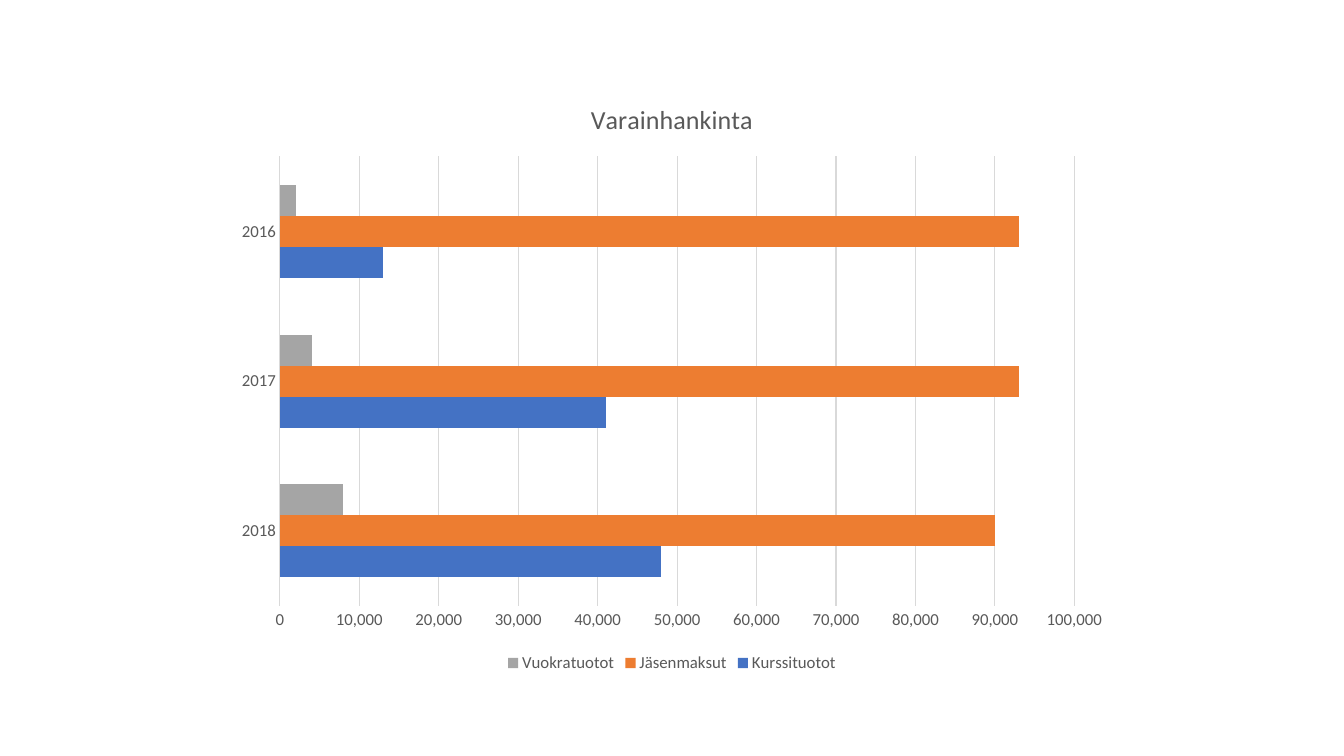
"""Build a slide with a bar chart of fundraising income by year."""
from pptx import Presentation
from pptx.chart.data import CategoryChartData
from pptx.dml.color import RGBColor
from pptx.enum.chart import XL_CHART_TYPE, XL_LEGEND_POSITION, XL_TICK_MARK
from pptx.util import Pt

BAR_CLUSTERED = XL_CHART_TYPE.BAR_CLUSTERED
LEGEND_BOTTOM = XL_LEGEND_POSITION.BOTTOM
NO_TICKS = XL_TICK_MARK.NONE

TITLE = "Varainhankinta"
YEARS = ["2018", "2017", "2016"]
INCOME = [
    ("Kurssituotot", [48000, 41000, 13000], "blue"),
    ("Jäsenmaksut", [90000, 93000, 93000], "orange"),
    ("Vuokratuotot", [8000, 4000, 2000], "silver"),
]
COLORS = {
    "blue": "4472C4",
    "orange": "ED7D31",
    "silver": "A5A5A5",
    "text": "595959",
    "line": "D9D9D9",
}
FONT = "Calibri"
SLIDE_SIZE = (1344, 756)
CHART_BOX = (224, 79, 896, 598)


def px(length):
    return round(length * 914400 / 100.8)


def color(name):
    return RGBColor.from_string(COLORS[name])


def style_font(font, size):
    font.name = FONT
    font.size = Pt(size)
    font.bold = False
    font.color.rgb = color("text")


def style_line(line):
    line.color.rgb = color("line")
    line.width = Pt(0.75)


def add_income_chart(slide):
    data = CategoryChartData(number_format="#,##0")
    data.categories = YEARS
    for name, amounts, _ in INCOME:
        data.add_series(name, amounts)
    chart = slide.shapes.add_chart(BAR_CLUSTERED, *map(px, CHART_BOX), data).chart
    style_font(chart.font, 12)

    chart.has_title = True
    heading = chart.chart_title.text_frame.paragraphs[0].add_run()
    heading.text = TITLE
    style_font(heading.font, 18.6)
    chart.chart_title.include_in_layout = False

    chart.has_legend = True
    chart.legend.position = LEGEND_BOTTOM
    chart.legend.include_in_layout = False
    style_font(chart.legend.font, 12)

    bars = chart.plots[0]
    bars.gap_width = 182
    bars.overlap = 0
    bars.vary_by_categories = False
    for series, (_, _, fill) in zip(bars.series, INCOME):
        series.format.fill.solid()
        series.format.fill.fore_color.rgb = color(fill)
        series.invert_if_negative = False

    years, amounts = chart.category_axis, chart.value_axis
    for axis in (years, amounts):
        axis.major_tick_mark = NO_TICKS
        axis.minor_tick_mark = NO_TICKS
        style_font(axis.tick_labels.font, 12)
    years.has_major_gridlines = False
    style_line(years.format.line)
    amounts.minimum_scale = 0
    amounts.maximum_scale = 100000
    amounts.major_unit = 10000
    amounts.has_major_gridlines = True
    style_line(amounts.major_gridlines.format.line)
    amounts.format.line.fill.background()
    amounts.tick_labels.number_format = "#,##0"
    amounts.tick_labels.number_format_is_linked = False


def main():
    deck = Presentation()
    deck.slide_width, deck.slide_height = map(px, SLIDE_SIZE)
    add_income_chart(deck.slides.add_slide(deck.slide_layouts[6]))
    deck.save("out.pptx")


if __name__ == "__main__":
    main()
